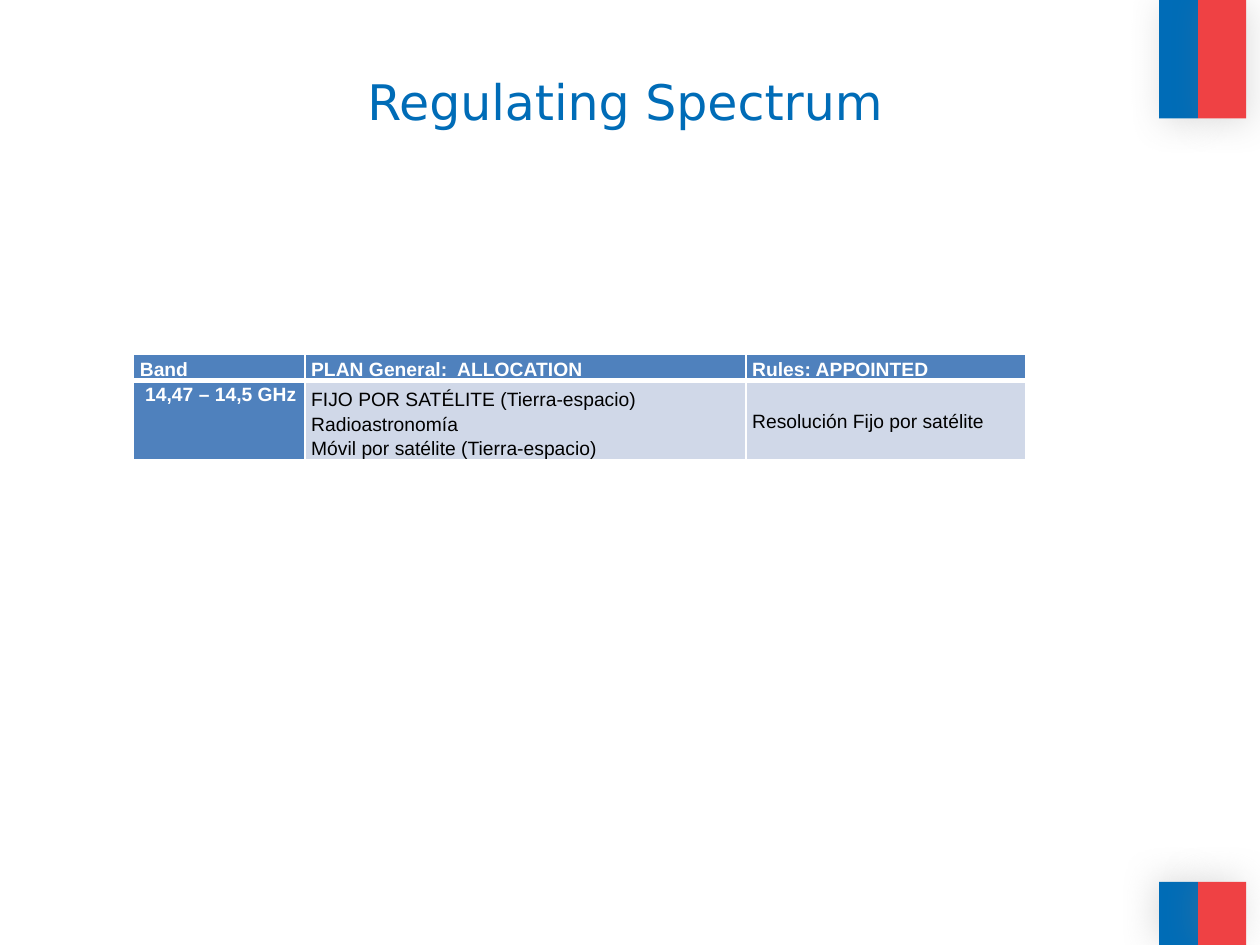
from dataclasses import dataclass

from lxml.etree import SubElement
from pptx import Presentation
from pptx.dml.color import RGBColor as Rgb
from pptx.enum.shapes import MSO_SHAPE as Shape
from pptx.enum.text import MSO_ANCHOR as Anchor, PP_ALIGN as Align
from pptx.oxml.ns import qn
from pptx.util import Inches, Pt


@dataclass(frozen=True)
class Theme:
    blue: str = "006CB7"
    red: str = "EF4144"
    head: str = "4F81BD"
    body: str = "D0D8E8"
    white: str = "FFFFFF"
    black: str = "000000"
    shade: str = "808080"
    title_font: str = "DejaVu Sans"
    cell_font: str = "Arial"
    title_size: int = 28
    cell_size: int = 11


THEME = Theme()
COLS = (1.36, 3.5, 2.22)
ROWS = (0.21, 0.63)
HEADS = ("Band", "PLAN General:  ALLOCATION", "Rules: APPOINTED")
BAND = " 14,47 – 14,5 GHz"
PLAN = "\n".join((
    "FIJO POR SATÉLITE (Tierra‑espacio)",
    "Radioastronomía",
    "Móvil por satélite (Tierra-espacio)",
))
RULE = "Resolución Fijo por satélite"


def style(para, font, size, color, bold=False):
    para.font.name = font
    para.font.size = Pt(size)
    para.font.bold = bold
    para.font.color.rgb = Rgb.from_string(color)


def add_color(parent, color, alpha=None):
    node = SubElement(parent, qn("a:srgbClr"), val=color)
    if alpha:
        SubElement(node, qn("a:alpha"), val=str(alpha * 1000))


def add_bar(slide, left, top, width, height, color, angle):
    """Add a flag stripe with a soft shadow cast at the given angle."""
    bar = slide.shapes.add_shape(
        Shape.RECTANGLE, Inches(left), Inches(top), Inches(width), Inches(height))
    bar.fill.solid()
    bar.fill.fore_color.rgb = Rgb.from_string(color)
    bar.line.fill.background()
    bar.shadow.inherit = False
    effects = bar.element.spPr.find(qn("a:effectLst"))
    shadow = SubElement(
        effects, qn("a:outerShdw"), blurRad=str(Pt(20)), dist=str(Pt(3)),
        dir=str(angle * 60000), algn="ctr", rotWithShape="0")
    add_color(shadow, THEME.shade, alpha=25)


def add_flag(slide, top, height, angle):
    add_bar(slide, 9.2, top, 0.31, height, THEME.blue, angle)
    add_bar(slide, 9.51, top, 0.38, height, THEME.red, angle)


def set_title(slide, text):
    title = slide.shapes.title
    title.left, title.top = Inches(0.9), Inches(0.3)
    title.width, title.height = Inches(8.12), Inches(1.01)
    frame = title.text_frame
    frame.text = text
    frame.vertical_anchor = Anchor.MIDDLE
    para = frame.paragraphs[0]
    para.alignment = Align.CENTER
    style(para, THEME.title_font, THEME.title_size, THEME.blue)


def set_lines(cell, top, bottom):
    """Draw white cell borders; side borders are one point wide."""
    props = cell._tc.get_or_add_tcPr()
    for side, width in zip("LRTB", (1, 1, top, bottom)):
        line = SubElement(props, qn(f"a:ln{side}"), w=str(Pt(width)))
        add_color(SubElement(line, qn("a:solidFill")), THEME.white)


def set_cell(cell, text, strong, anchor, top, bottom):
    set_lines(cell, top, bottom)
    cell.fill.solid()
    cell.fill.fore_color.rgb = Rgb.from_string(THEME.head if strong else THEME.body)
    cell.margin_left = cell.margin_right = Inches(0.05)
    cell.margin_top = cell.margin_bottom = 0
    cell.vertical_anchor = anchor
    cell.text = text
    for para in cell.text_frame.paragraphs:
        para.line_spacing = 1.15
        style(para, THEME.cell_font, THEME.cell_size,
              THEME.white if strong else THEME.black, strong)


def add_bands(slide):
    """Add the table of frequency bands."""
    table = slide.shapes.add_table(
        len(ROWS), len(COLS), Inches(1.06), Inches(2.81),
        Inches(sum(COLS)), Inches(sum(ROWS))).table
    table.horz_banding = False
    for col, width in zip(table.columns, COLS):
        col.width = Inches(width)
    for row, height in zip(table.rows, ROWS):
        row.height = Inches(height)
    for i, text in enumerate(HEADS):
        set_cell(table.cell(0, i), text, True, Anchor.BOTTOM, 1, 3)
    values = ((BAND, Anchor.TOP), (PLAN, Anchor.BOTTOM), (RULE, Anchor.MIDDLE))
    for i, (text, anchor) in enumerate(values):
        set_cell(table.cell(1, i), text, i == 0, anchor, 3, 1)


def main():
    deck = Presentation()
    deck.slide_width, deck.slide_height = Inches(10), Inches(7.5)
    slide = deck.slides.add_slide(deck.slide_layouts[5])
    add_flag(slide, 0, 0.94, 45)
    add_flag(slide, 7, 0.5, 215)
    add_bands(slide)
    set_title(slide, "Regulating Spectrum")
    deck.save("out.pptx")


if __name__ == "__main__":
    main()
